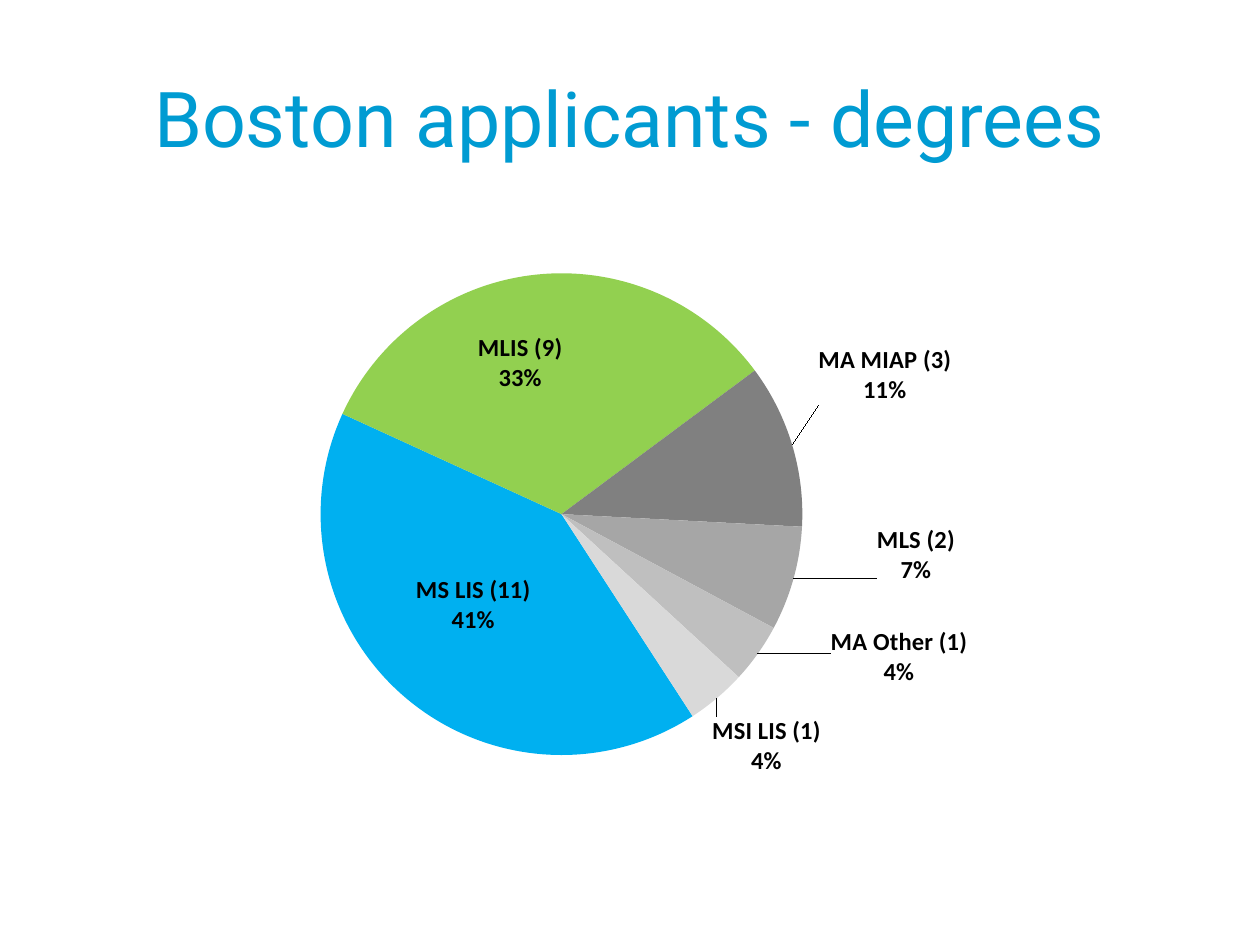
from lxml.etree import SubElement
from pptx import Presentation
from pptx.chart.data import CategoryChartData
from pptx.dml.color import RGBColor
from pptx.enum.chart import XL_CHART_TYPE, XL_LABEL_POSITION
from pptx.enum.text import MSO_ANCHOR, PP_ALIGN
from pptx.oxml import parse_xml
from pptx.oxml.ns import nsdecls, qn
from pptx.util import Cm, Pt

INSIDE = XL_LABEL_POSITION.CENTER
OUTSIDE = XL_LABEL_POSITION.OUTSIDE_END

DEGREES = [
    ("MS LIS (11)", 41, "00B0F0", INSIDE, (-0.01, 0)),
    ("MLIS (9)", 33, "92D050", INSIDE, (-0.03, -0.05)),
    ("MA MIAP (3)", 11, "808080", OUTSIDE, (0.02, -0.06)),
    ("MLS (2)", 7, "A6A6A6", OUTSIDE, (0.08, -0.09)),
    ("MA Other (1)", 4, "BFBFBF", OUTSIDE, (0.07, -0.05)),
    ("MSI LIS (1)", 4, "D9D9D9", OUTSIDE, (-0.01, 0.02)),
]


def color(value):
    return RGBColor.from_string(value)


def style_font(font, name, size, value, bold=False):
    font.name = name
    font.size = Pt(size)
    font.bold = bold
    font.color.rgb = color(value)


def manual_layout(**settings):
    entries = "".join(f'<c:{tag} val="{value}"/>' for tag, value in settings.items())
    return parse_xml(
        f'<c:layout {nsdecls("c")}><c:manualLayout>{entries}</c:manualLayout></c:layout>'
    )


def show_category_and_percent(labels):
    for tag, shown in (("showVal", 0), ("showCatName", 1), ("showPercent", 1)):
        labels.find(qn(f"c:{tag}")).set("val", str(shown))
    separator = SubElement(labels, qn("c:separator"))
    separator.text = "\n"
    labels.find(qn("c:showBubbleSize")).addnext(separator)


def add_title(slide, left, top, width, height):
    title = slide.shapes.add_textbox(left, top, width, height).text_frame
    title.word_wrap = True
    title.vertical_anchor = MSO_ANCHOR.MIDDLE
    heading = title.paragraphs[0]
    heading.alignment = PP_ALIGN.CENTER
    run = heading.add_run()
    run.text = "Boston applicants - degrees"
    style_font(run.font, "Roboto", 44, "009BD2")


def add_degree_pie(slide, left, top, width, height):
    data = CategoryChartData()
    data.categories = [degree[0] for degree in DEGREES]
    data.add_series("Series 1", [degree[1] for degree in DEGREES])
    pie = slide.shapes.add_chart(
        XL_CHART_TYPE.PIE, left, top, width, height, data
    ).chart
    pie.has_legend = False
    pie.has_title = False
    style_font(pie.font, "Calibri", 10, "000000")

    plot = pie.plots[0]
    plot.vary_by_categories = True
    pie_xml = plot.series[0]._element.getparent()
    angle = pie_xml.find(qn("c:firstSliceAng"))
    if angle is None:
        angle = SubElement(pie_xml, qn("c:firstSliceAng"))
    angle.set("val", "147")

    plot_area = pie_xml.getparent()
    for layout in plot_area.findall(qn("c:layout")):
        plot_area.remove(layout)
    plot_area.insert(0, manual_layout(
        layoutTarget="inner", xMode="edge", yMode="edge",
        x=0.214, y=0.136, w=0.505, h=0.777,
    ))

    shares = plot.series[0]
    labels = shares.data_labels
    labels.number_format = "0%"
    labels.number_format_is_linked = False
    style_font(labels.font, "Calibri", 14, "000000", True)
    show_category_and_percent(labels._element)

    for index, (_, _, fill, position, (dx, dy)) in enumerate(DEGREES):
        point = shares.points[index]
        point.format.fill.solid()
        point.format.fill.fore_color.rgb = color(fill)
        label = point.data_label
        style_font(label.font, "Calibri", 14, "000000", True)
        label.position = position
        label_xml = labels._element.findall(qn("c:dLbl"))[index]
        show_category_and_percent(label_xml)
        label_xml.find(qn("c:idx")).addnext(manual_layout(x=dx, y=dy))


def main():
    deck = Presentation()
    deck.slide_width = Cm(25.4)
    deck.slide_height = Cm(19.05)
    slide = deck.slides.add_slide(deck.slide_layouts[6])
    add_title(slide, Cm(1.27), Cm(0.76), Cm(22.86), Cm(3.18))
    add_degree_pie(slide, Cm(2.34), Cm(3.81), Cm(19.25), Cm(12.5))
    deck.save("out.pptx")


if __name__ == "__main__":
    main()
